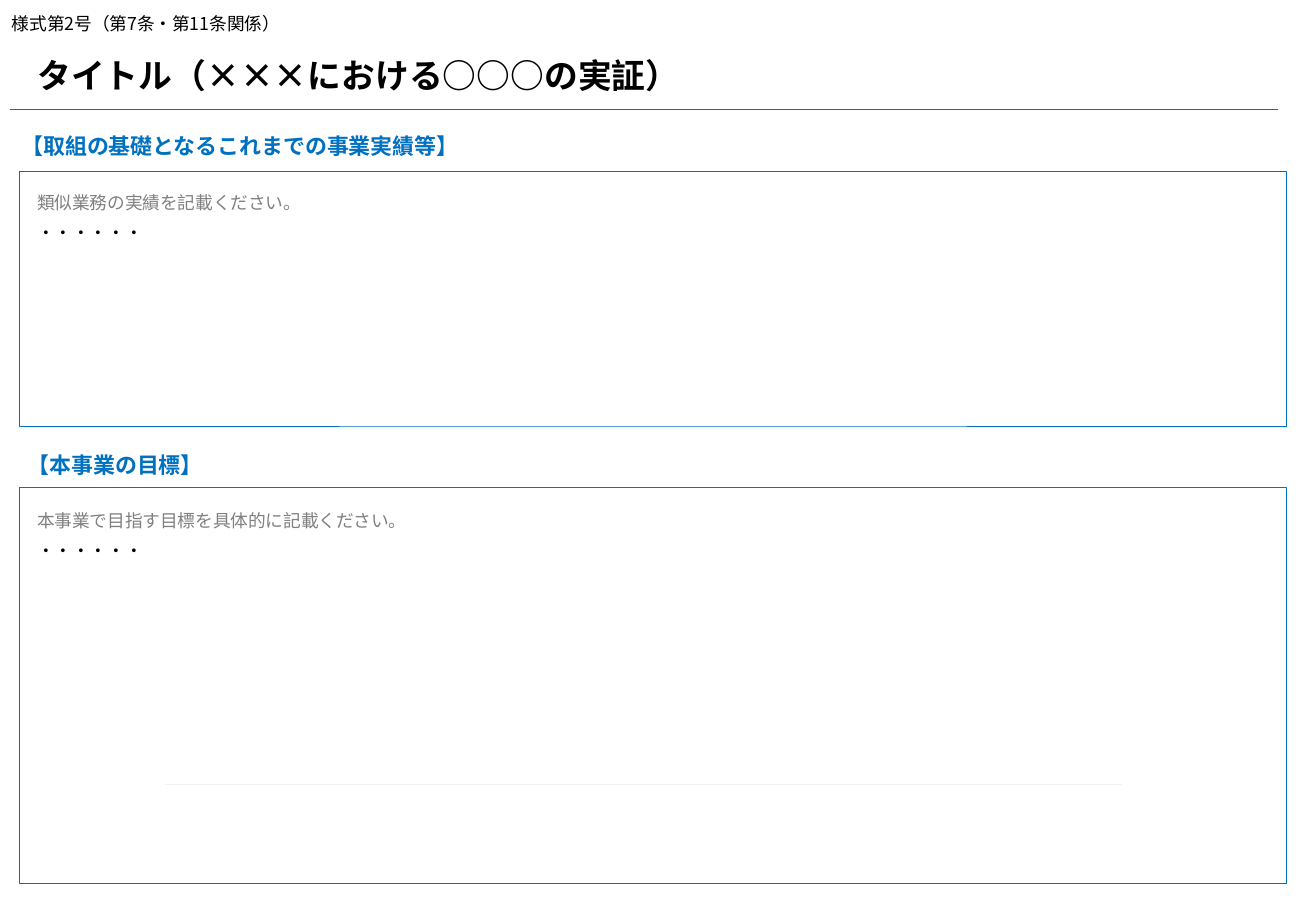
"""Build a form slide with a title and two framed entry sections."""
from dataclasses import dataclass

from lxml.etree import SubElement
from pptx import Presentation
from pptx.dml.color import RGBColor as RGB
from pptx.enum.shapes import MSO_CONNECTOR as CONN, MSO_SHAPE as SHAPE
from pptx.enum.text import MSO_ANCHOR as ANCHOR
from pptx.oxml.ns import qn
from pptx.util import Cm, Pt


@dataclass(frozen=True)
class Theme:
    font: str = "Noto Sans CJK JP"
    ink: RGB = RGB(0, 0, 0)
    blue: RGB = RGB(0, 0x70, 0xC0)
    hint: RGB = RGB(0x80, 0x80, 0x80)
    pale: RGB = RGB(0xF2, 0xF2, 0xF2)
    title: float = 20
    heading: float = 13
    body: float = 10.5
    line: float = 0.5


T = Theme()

prs = Presentation()
prs.slide_width, prs.slide_height = Cm(27.52), Cm(19.05)
s = prs.slides.add_slide(prs.slide_layouts[6])


def add_text(x, y, w, h, lines, size, bold=False, after=0):
    tf = s.shapes.add_textbox(Cm(x), Cm(y), Cm(w), Cm(h)).text_frame
    tf.word_wrap = True
    for i, (text, color) in enumerate(lines):
        p = tf.paragraphs[0] if i == 0 else tf.add_paragraph()
        p.space_after = Pt(after)
        r = p.add_run()
        r.text = text
        r.font.name, r.font.size, r.font.bold = T.font, Pt(size), bold
        r.font.color.rgb = color
        SubElement(r.font._element, qn("a:ea")).set("typeface", T.font)
    return tf


def add_rule(x1, x2, y, color):
    ln = s.shapes.add_connector(CONN.STRAIGHT, Cm(x1), Cm(y), Cm(x2), Cm(y))
    ln.line.color.rgb, ln.line.width = color, Pt(T.line)
    SubElement(ln._element.spPr, qn("a:effectLst"))


add_text(0, 0.15, 24.84, 0.71, [("様式第2号（第7条・第11条関係）", T.ink)], T.body, after=5)
tf = add_text(0.53, 0.97, 26.9, 1.19, [("タイトル（×××における○○○の実証）", T.ink)], T.title, bold=True)
tf.vertical_anchor = ANCHOR.MIDDLE
add_rule(0.2, 26.72, 2.29, T.blue)

sections = [
    ("【取組の基礎となるこれまでの事業実績等】", 0.2, 2.64, 3.58, 5.33,
     "類似業務の実績を記載ください。", 3.89),
    ("【本事業の目標】", 0.33, 9.32, 10.19, 8.28,
     "本事業で目指す目標を具体的に記載ください。", 10.54),
]
for heading, head_x, head_y, box_y, box_h, hint, hint_y in sections:
    box = s.shapes.add_shape(SHAPE.RECTANGLE, Cm(0.41), Cm(box_y), Cm(26.49), Cm(box_h))
    box.shadow.inherit = False
    box.fill.background()
    box.line.color.rgb, box.line.width = T.blue, Pt(T.line)
    add_text(head_x, head_y, 12, 0.81, [(heading, T.blue)], T.heading, bold=True)
    add_text(0.53, hint_y, 26.06, 1.32, [(hint, T.hint), ("・・・・・・", T.ink)], T.body, after=5)

add_rule(3.45, 23.47, 16.41, T.pale)

prs.save("out.pptx")
